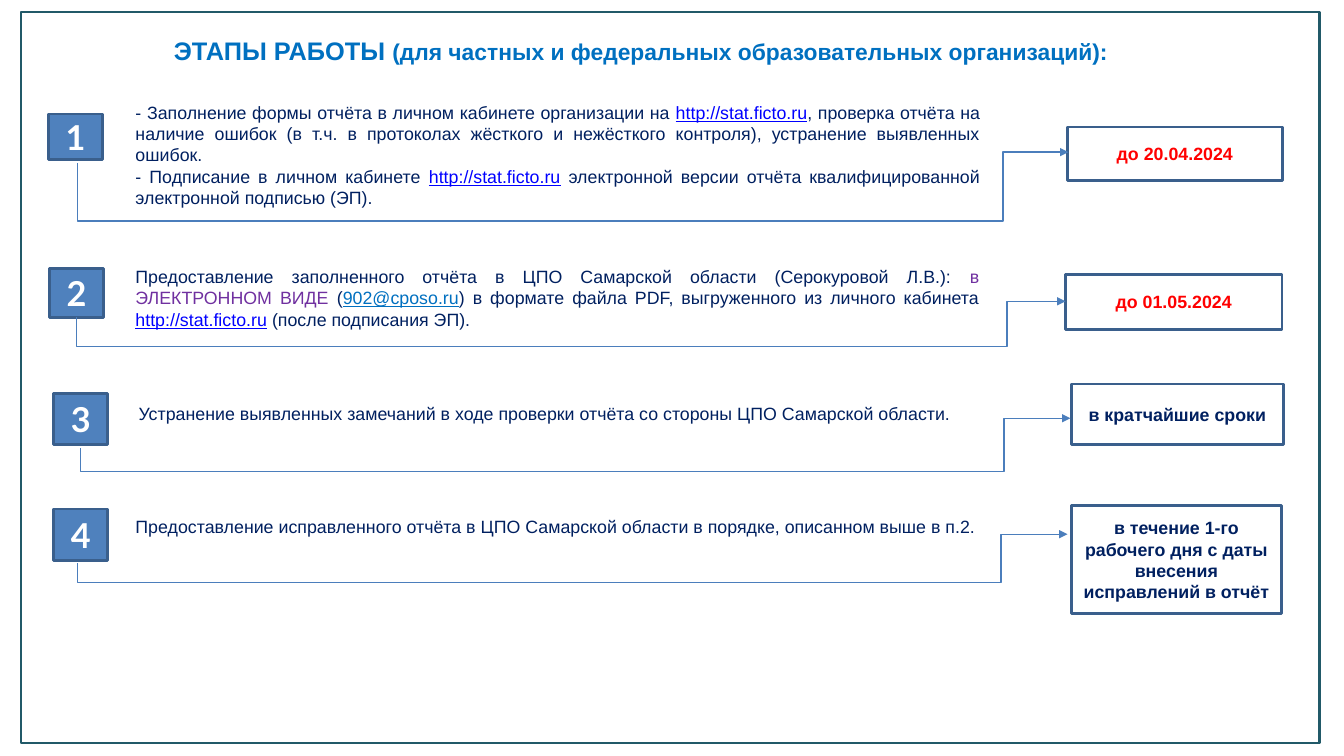
"""Build the slide with four reporting stages and their deadlines."""
from lxml import etree
from pptx import Presentation
from pptx.dml.color import RGBColor
from pptx.enum.shapes import MSO_CONNECTOR, MSO_SHAPE
from pptx.enum.text import MSO_ANCHOR, MSO_AUTO_SIZE, PP_ALIGN
from pptx.oxml.ns import qn
from pptx.util import Pt

RECTANGLE = MSO_SHAPE.RECTANGLE
ELBOW = MSO_CONNECTOR.ELBOW
TOP, MIDDLE = MSO_ANCHOR.TOP, MSO_ANCHOR.MIDDLE
NO_AUTOFIT = MSO_AUTO_SIZE.NONE
LEFT, CENTER, JUSTIFY = PP_ALIGN.LEFT, PP_ALIGN.CENTER, PP_ALIGN.JUSTIFY

NAVY, BLUE, LINK, PURPLE = "002060", "0070C0", "0000FF", "7030A0"
RED, WHITE = "FF0000", "FFFFFF"
BADGE_FILL, BOX_LINE, ARROW_LINE, FRAME_LINE = "4F81BD", "3A5F8C", "4B7EBC", "215968"
SITE = ("http://stat.ficto.ru", LINK)

STAGES = [
    {
        "badge": (34.6, 81.4, 38.9, 32.4),
        "body": (90, 69.1, 617, 84.2),
        "box": (762.5, 90.7, 153.4, 38.2),
        "arrow": (55.4, 116.6, 157.7, 716.4, 763.2, 108.7),
        "deadline": ("до 20.04.2024", RED),
        "paragraphs": [
            [
                ("- Заполнение формы отчёта в личном кабинете организации на ", NAVY),
                SITE,
                (", проверка отчёта на наличие ошибок (в т.ч. в протоколах жёсткого "
                 "и нежёсткого контроля), устранение выявленных ошибок.", NAVY),
            ],
            [
                ("- Подписание в личном кабинете ", NAVY),
                SITE,
                (" электронной версии отчёта квалифицированной "
                 "электронной подписью (ЭП).", NAVY),
            ],
        ],
    },
    {
        "badge": (35.3, 191.5, 38.9, 35.3),
        "body": (90, 186.5, 616.3, 53.3),
        "box": (761, 195.8, 154.8, 39.6),
        "arrow": (54.7, 226.8, 247.7, 719.3, 761, 215.3),
        "deadline": ("до 01.05.2024", RED),
        "paragraphs": [
            [
                ("Предоставление заполненного отчёта в ЦПО Самарской области "
                 "(Серокуровой Л.В.): ", NAVY),
                ("в ЭЛЕКТРОННОМ ВИДЕ ", PURPLE),
                ("(", NAVY),
                ("902@cposo.ru", BLUE),
                (") в формате файла PDF, выгруженного из личного кабинета ", NAVY),
                SITE,
                (" (после подписания ЭП).", NAVY),
            ],
        ],
    },
    {
        "badge": (38.2, 280.8, 38.9, 36.7),
        "body": (92.2, 284.4, 615.6, 22.3),
        "box": (765.4, 274.3, 151.2, 43.2),
        "arrow": (57.6, 320.4, 337, 717.1, 764.6, 298.8),
        "deadline": ("в кратчайшие сроки", NAVY),
        "paragraphs": [
            [("Устранение выявленных замечаний в ходе проверки отчёта "
              "со стороны ЦПО Самарской области.", NAVY)],
        ],
    },
    {
        "badge": (38.2, 363.6, 38.9, 36.7),
        "body": (90, 365, 617, 38.2),
        "box": (765.4, 361.4, 149.8, 77),
        "arrow": (55.4, 402.5, 416.2, 715, 762.5, 381.6),
        "deadline": ("в течение 1-го рабочего дня с даты внесения "
                     "исправлений в отчёт", NAVY),
        "paragraphs": [
            [("Предоставление исправленного отчёта в ЦПО Самарской области "
              "в порядке, описанном выше в п.2.", NAVY)],
        ],
    },
]


def color(value):
    return RGBColor.from_string(value)


def write_text(shape, paragraphs, size, alignment, anchor, bold=False, font="Arial"):
    frame = shape.text_frame
    frame.word_wrap = True
    frame.auto_size = NO_AUTOFIT
    frame.vertical_anchor = anchor
    frame.margin_left = frame.margin_right = Pt(6.8)
    frame.margin_top = frame.margin_bottom = Pt(3.4)
    for index, runs in enumerate(paragraphs):
        paragraph = frame.add_paragraph() if index else frame.paragraphs[0]
        paragraph.alignment = alignment
        for text, text_color in runs:
            run = paragraph.add_run()
            run.text = text
            run.font.name = font
            run.font.size = Pt(size)
            run.font.bold = bold
            run.font.color.rgb = color(text_color)
            if text_color == LINK or "@" in text:
                run.font.underline = True


presentation = Presentation()
presentation.slide_width, presentation.slide_height = Pt(960), Pt(540)
slide = presentation.slides.add_slide(presentation.slide_layouts[5])
shapes = slide.shapes

title = shapes.title
title.left, title.top, title.width, title.height = Pt(117.4), Pt(21.6), Pt(729.4), Pt(29.5)
write_text(title, [[("ЭТАПЫ РАБОТЫ ", BLUE)]], 18.1, LEFT, TOP, bold=True)
audience = title.text_frame.paragraphs[0].add_run()
audience.text = "(для частных и федеральных образовательных организаций):"
audience.font.name = "Arial"
audience.font.size = Pt(16.3)
audience.font.bold = True
audience.font.color.rgb = color(BLUE)

for number, stage in enumerate(STAGES, start=1):
    badge = shapes.add_shape(RECTANGLE, *map(Pt, stage["badge"]))
    badge.fill.solid()
    badge.fill.fore_color.rgb = color(BADGE_FILL)
    write_text(badge, [[(str(number), WHITE)]], 24.5, CENTER, MIDDLE, True, "Lato")

    body = shapes.add_textbox(*map(Pt, stage["body"]))
    write_text(body, stage["paragraphs"], 12.7, JUSTIFY, TOP)

    box = shapes.add_shape(RECTANGLE, *map(Pt, stage["box"]))
    box.fill.background()
    write_text(box, [[stage["deadline"]]], 12.7, CENTER, MIDDLE, bold=True)

    for shape in (badge, box):
        shape.shadow.inherit = False
        shape.line.color.rgb = color(BOX_LINE)
        shape.line.width = Pt(2)

    start_x, start_y, low_y, elbow_x, end_x, end_y = stage["arrow"]
    span, rise = end_x - start_x, start_y - end_y
    left = (start_x + end_x - rise) / 2
    top = (start_y + end_y - span) / 2
    arrow = shapes.add_connector(ELBOW, Pt(left + rise), Pt(top + span), Pt(left), Pt(top))
    arrow.line.color.rgb = color(ARROW_LINE)
    arrow.line.width = Pt(1)
    properties = arrow.element.spPr
    properties.find(qn("a:xfrm")).set("rot", "5400000")
    geometry = properties.find(qn("a:prstGeom"))
    geometry.set("prst", "bentConnector4")
    adjustments = geometry.find(qn("a:avLst"))
    bends = {"adj1": (start_y - low_y) / rise, "adj2": (elbow_x - start_x) / span}
    for name, ratio in bends.items():
        etree.SubElement(adjustments, qn("a:gd"), name=name, fmla=f"val {round(ratio * 100000)}")
    etree.SubElement(properties.find(qn("a:ln")), qn("a:tailEnd"), type="triangle")
    etree.SubElement(properties, qn("a:effectLst"))

frame_border = shapes.add_shape(RECTANGLE, Pt(15.1), Pt(8.6), Pt(927.4), Pt(522))
frame_border.shadow.inherit = False
frame_border.fill.background()
frame_border.line.color.rgb = color(FRAME_LINE)
frame_border.line.width = Pt(1.5)

presentation.save("out.pptx")
